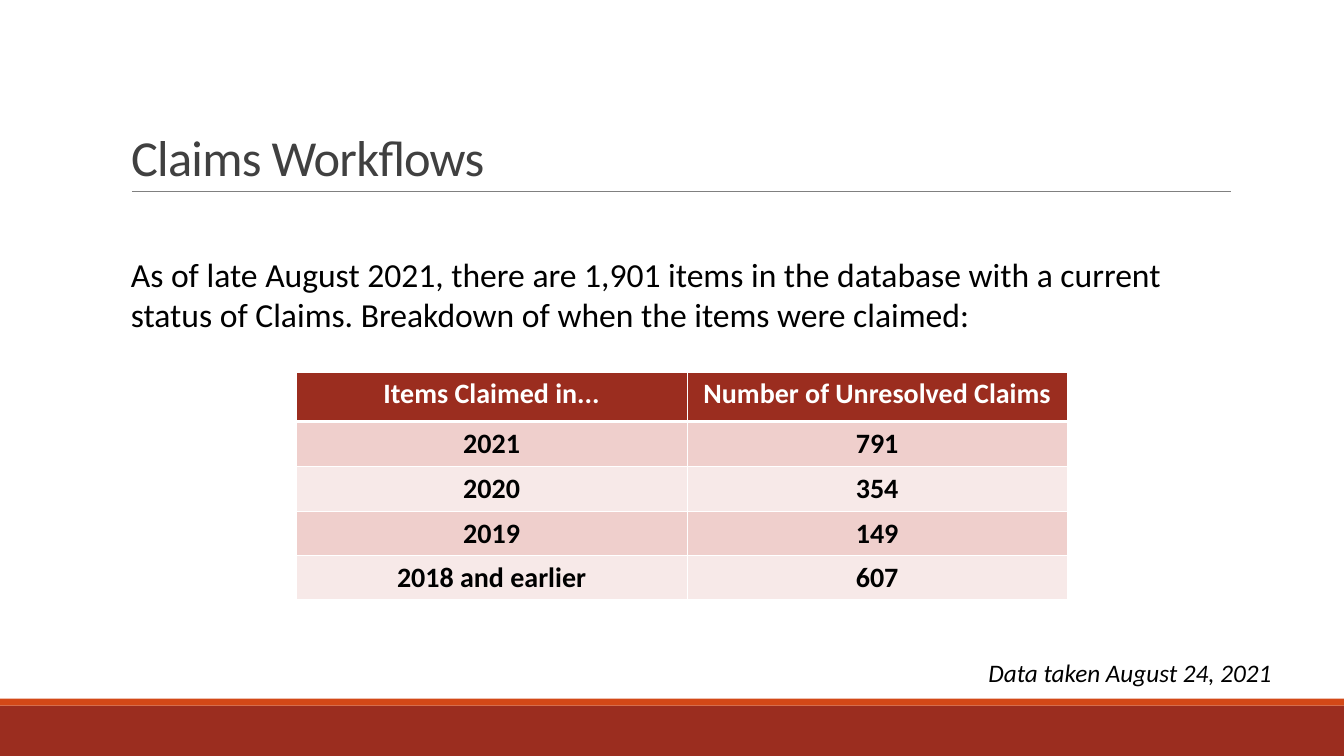
from dataclasses import dataclass

from lxml import etree
from pptx import Presentation
from pptx.dml.color import RGBColor
from pptx.enum.shapes import MSO_CONNECTOR, MSO_SHAPE
from pptx.enum.text import MSO_ANCHOR, MSO_AUTO_SIZE, PP_ALIGN
from pptx.oxml.ns import qn
from pptx.slide import Slide
from pptx.table import _Cell
from pptx.text.text import TextFrame
from pptx.util import Pt

RECTANGLE = MSO_SHAPE.RECTANGLE
STRAIGHT = MSO_CONNECTOR.STRAIGHT
TOP, BOTTOM = MSO_ANCHOR.TOP, MSO_ANCHOR.BOTTOM
LEFT, CENTER = PP_ALIGN.LEFT, PP_ALIGN.CENTER
NO_AUTOFIT = MSO_AUTO_SIZE.NONE

FONT = "Calibri"
WHITE = RGBColor(0xFF, 0xFF, 0xFF)
BLACK = RGBColor(0x00, 0x00, 0x00)
TITLE_GREY = RGBColor(0x40, 0x40, 0x40)
RULE_GREY = RGBColor(0x80, 0x80, 0x80)
DARK_RED = RGBColor(0x9B, 0x2D, 0x1F)
ORANGE = RGBColor(0xD3, 0x48, 0x17)
ROW_TINTS = (RGBColor(0xEF, 0xCF, 0xCC), RGBColor(0xF7, 0xE9, 0xE8))

SLIDE_WIDTH, SLIDE_HEIGHT = 960, 540
TITLE_ONLY = 5


@dataclass
class Band:
    top: float
    height: float
    color: RGBColor


@dataclass
class Note:
    text: str
    left: float
    top: float
    width: float
    height: float
    size: float
    italic: bool = False


FOOTER_BANDS = (Band(504, 36, DARK_RED), Band(499, 5, ORANGE))
NOTES = (
    Note("As of late August 2021, there are 1,901 items in the database with a "
         "current status of Claims. Breakdown of when the items were claimed:",
         86.4, 177.8, 803.5, 138.2, 24),
    Note("Data taken August 24, 2021", 699, 466, 235.5, 29, 18, italic=True),
)
CLAIMS = (
    ("Items Claimed in...", "Number of Unresolved Claims"),
    ("2021", "791"),
    ("2020", "354"),
    ("2019", "149"),
    ("2018 and earlier", "607"),
)
COLUMN_WIDTHS = (279.4, 271.4)
ROW_HEIGHTS = (35.2, 32.4, 31, 31, 31)


def write(frame: TextFrame, text: str, *, size: float, color: RGBColor = BLACK,
          bold: bool = False, italic: bool = False, align: PP_ALIGN = LEFT,
          anchor: MSO_ANCHOR = TOP, line_spacing: float = 1.0,
          tracking: float = 0) -> None:
    """Fill the frame with one formatted paragraph; tracking is in points."""
    frame.word_wrap = True
    frame.vertical_anchor = anchor
    paragraph = frame.paragraphs[0]
    paragraph.alignment = align
    paragraph.line_spacing = line_spacing
    run = paragraph.add_run()
    run.text = text
    run.font.name = FONT
    run.font.size = Pt(size)
    run.font.bold = bold
    run.font.italic = italic
    run.font.color.rgb = color
    if tracking:
        run.font._element.set("spc", str(round(tracking * 100)))


def add_band(slide: Slide, band: Band) -> None:
    bar = slide.shapes.add_shape(RECTANGLE, 0, Pt(band.top),
                                 Pt(SLIDE_WIDTH), Pt(band.height))
    bar.shadow.inherit = False
    bar.fill.solid()
    bar.fill.fore_color.rgb = band.color
    bar.line.fill.background()


def add_title(slide: Slide, text: str) -> None:
    title = slide.shapes.title
    title.left, title.top = Pt(86.4), Pt(22.3)
    title.width, title.height = Pt(792), Pt(114.5)
    title.text_frame.auto_size = NO_AUTOFIT
    write(title.text_frame, text, size=36, color=TITLE_GREY, anchor=BOTTOM,
          line_spacing=0.85, tracking=-0.5)


def add_title_rule(slide: Slide) -> None:
    rule = slide.shapes.add_connector(STRAIGHT, Pt(94.3), Pt(136.8),
                                      Pt(879.1), Pt(136.8))
    rule.line.color.rgb = RULE_GREY
    rule.line.width = Pt(0.5)
    etree.SubElement(rule._element.spPr, qn("a:effectLst"))


def add_note(slide: Slide, note: Note) -> None:
    box = slide.shapes.add_textbox(Pt(note.left), Pt(note.top),
                                   Pt(note.width), Pt(note.height))
    write(box.text_frame, note.text, size=note.size, italic=note.italic)


def set_borders(cell: _Cell, top: float, bottom: float) -> None:
    """Draw white borders, given the top and bottom widths in points."""
    properties = cell._tc.get_or_add_tcPr()
    widths = {"a:lnL": 1, "a:lnR": 1, "a:lnT": top, "a:lnB": bottom}
    for position, (side, width) in enumerate(widths.items()):
        border = etree.Element(qn(side), w=str(Pt(width)))
        fill = etree.SubElement(border, qn("a:solidFill"))
        etree.SubElement(fill, qn("a:srgbClr"), val=str(WHITE))
        properties.insert(position, border)


def add_claims_table(slide: Slide) -> None:
    table = slide.shapes.add_table(
        len(CLAIMS), len(COLUMN_WIDTHS), Pt(211.5), Pt(265.9),
        Pt(sum(COLUMN_WIDTHS)), Pt(sum(ROW_HEIGHTS))).table
    for column, width in zip(table.columns, COLUMN_WIDTHS):
        column.width = Pt(width)
    for row_index, (claim, height) in enumerate(zip(CLAIMS, ROW_HEIGHTS)):
        table.rows[row_index].height = Pt(height)
        is_header = row_index == 0
        for column_index, text in enumerate(claim):
            cell = table.cell(row_index, column_index)
            cell.fill.solid()
            cell.fill.fore_color.rgb = (
                DARK_RED if is_header else ROW_TINTS[(row_index - 1) % 2])
            set_borders(cell, top=3 if row_index == 1 else 1,
                        bottom=3 if is_header else 1)
            write(cell.text_frame, text, size=20, bold=True, align=CENTER,
                  color=WHITE if is_header else BLACK)


def main() -> None:
    presentation = Presentation()
    presentation.slide_width = Pt(SLIDE_WIDTH)
    presentation.slide_height = Pt(SLIDE_HEIGHT)
    slide = presentation.slides.add_slide(presentation.slide_layouts[TITLE_ONLY])
    for band in FOOTER_BANDS:
        add_band(slide, band)
    add_title_rule(slide)
    add_title(slide, "Claims Workflows")
    add_claims_table(slide)
    for note in NOTES:
        add_note(slide, note)
    presentation.save("out.pptx")


if __name__ == "__main__":
    main()
